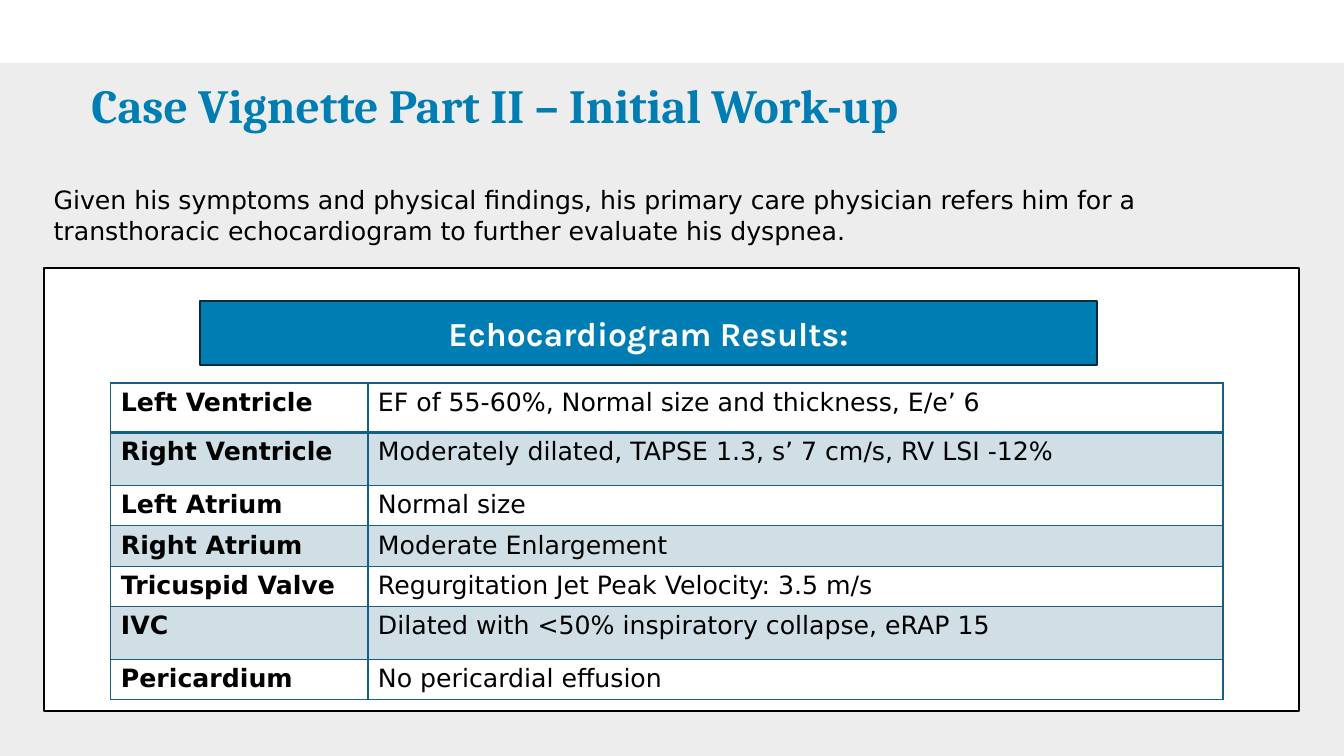
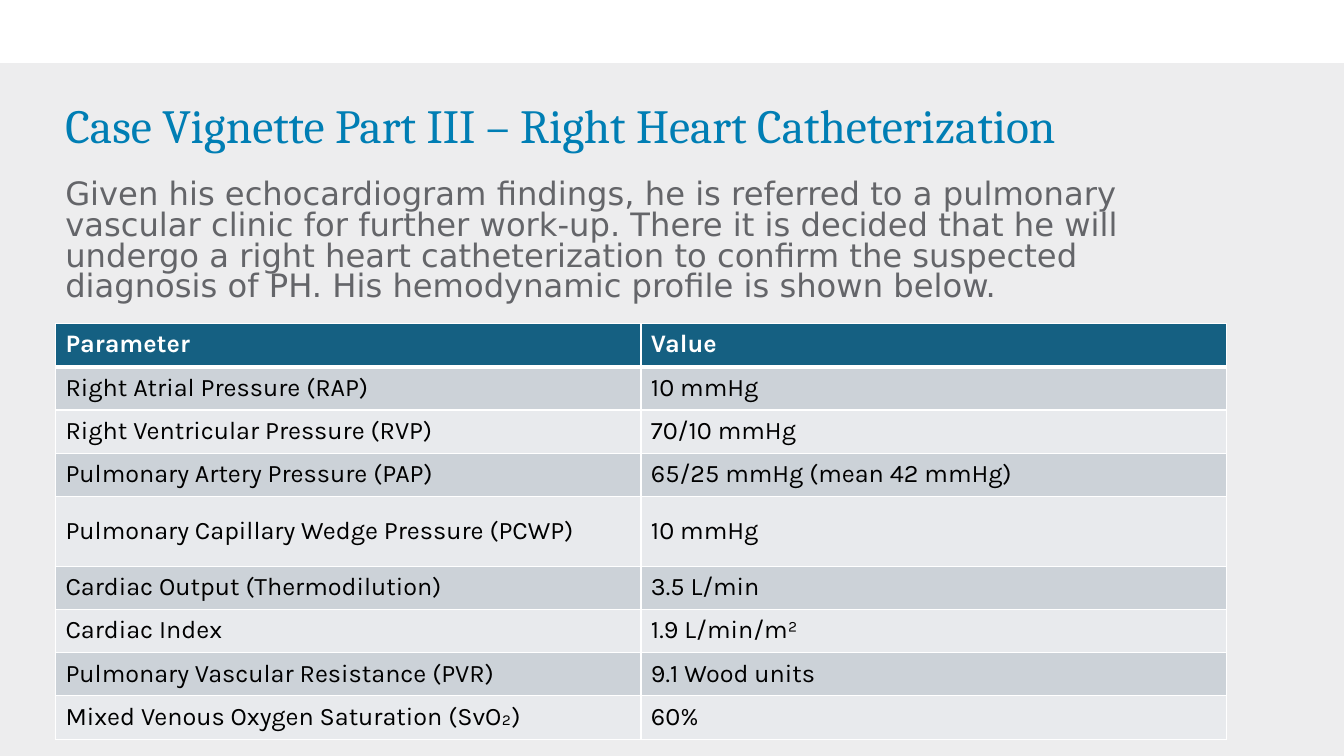
from dataclasses import dataclass

from lxml.etree import SubElement
from pptx import Presentation
from pptx.dml.color import RGBColor as Rgb
from pptx.enum.shapes import MSO_SHAPE as Form
from pptx.enum.text import MSO_ANCHOR as Anchor, PP_ALIGN as Align
from pptx.oxml.ns import qn
from pptx.util import Pt

UNIT = Pt(6)
COLS, ROWS = 160, 90


@dataclass(frozen=True)
class Theme:
    """Colours, fonts and type sizes of the deck."""
    page: str = "EDEDEE"
    white: str = "FFFFFF"
    black: str = "000000"
    blue: str = "007EB4"
    navy: str = "092A39"
    teal: str = "156082"
    pale: str = "D0DFE6"
    dark: str = "CCD2D8"
    light: str = "E8EAED"
    grey: str = "646569"
    serif: str = "Cambria"
    sans: str = "DejaVu Sans"
    karla: str = "Karla"
    head: int = 34
    label: int = 24
    lead: int = 23
    body: int = 18


T = Theme()


@dataclass(frozen=True)
class Box:
    """An area of the slide in grid columns and rows."""
    x: float
    y: float
    w: float
    h: float

    def inner(self, x, y, w, h):
        """Return a box placed relative to this one."""
        return Box(self.x + x, self.y + y, w, h)

    def emu(self):
        """Return left, top, width and height in slide units."""
        return [span(v) for v in (self.x, self.y, self.w, self.h)]


PAGE = Box(0, 0, COLS, ROWS)

ECHO = [
    ("Left Ventricle", "EF of 55-60%, Normal size and thickness, E/e’ 6"),
    ("Right Ventricle", "Moderately dilated, TAPSE 1.3, s’ 7 cm/s, RV LSI -12%"),
    ("Left Atrium", "Normal size"),
    ("Right Atrium", "Moderate Enlargement"),
    ("Tricuspid Valve", "Regurgitation Jet Peak Velocity: 3.5 m/s"),
    ("IVC", "Dilated with <50% inspiratory collapse, eRAP 15"),
    ("Pericardium", "No pericardial effusion"),
]

HEART = [
    ("Parameter", "Value"),
    ("Right Atrial Pressure (RAP)", "10 mmHg"),
    ("Right Ventricular Pressure (RVP)", "70/10 mmHg"),
    ("Pulmonary Artery Pressure (PAP)", "65/25 mmHg (mean 42 mmHg)"),
    ("Pulmonary Capillary Wedge Pressure (PCWP)", "10 mmHg"),
    ("Cardiac Output (Thermodilution)", "3.5 L/min"),
    ("Cardiac Index", "1.9 L/min/m²"),
    ("Pulmonary Vascular Resistance (PVR)", "9.1 Wood units"),
    ("Mixed Venous Oxygen Saturation (SvO₂)", "60%"),
]


def span(count):
    """Turn a count of grid steps into a length."""
    return round(count * UNIT)


def write(frame, words, size=T.body, face=T.sans, color=T.black, bold=False,
          align=Align.LEFT, space=None, after=0):
    """Write one formatted paragraph into a text frame."""
    frame.word_wrap = True
    para = frame.paragraphs[0]
    para.alignment = align
    para.space_before, para.space_after = Pt(0), Pt(after)
    if space:
        para.line_spacing = space
    run = para.add_run()
    run.text = words
    font = run.font
    font.size, font.name, font.bold = Pt(size), face, bold
    font.color.rgb = Rgb.from_string(color)


def note(slide, box, words, **form):
    """Add a text box."""
    write(slide.shapes.add_textbox(*box.emu()).text_frame, words, **form)


def panel(slide, box, fill, line=None):
    """Add a plain rectangle and return it."""
    shape = slide.shapes.add_shape(Form.RECTANGLE, *box.emu())
    shape.shadow.inherit = False
    shape.fill.solid()
    shape.fill.fore_color.rgb = Rgb.from_string(fill)
    if line:
        shape.line.color.rgb = Rgb.from_string(line)
        shape.line.width = Pt(1.5)
    else:
        shape.line.fill.background()
    return shape


def edge(cell, color, top, base):
    """Draw the four borders of a cell."""
    props = cell._tc.get_or_add_tcPr()
    for side, width in zip("LRTB", (1, 1, top, base)):
        line = SubElement(props, qn(f"a:ln{side}"), w=str(Pt(width)))
        fill = SubElement(line, qn("a:solidFill"))
        SubElement(fill, qn("a:srgbClr"), val=color)


def grid(slide, box, data, cols, rows, look, line, rule, anchor):
    """Add a table; look gives each cell its fill and text format."""
    table = slide.shapes.add_table(len(rows), len(cols), *box.emu()).table
    table.first_row = table.horz_banding = False
    for col, width in zip(table.columns, cols):
        col.width = span(width)
    for r, (row, height) in enumerate(zip(table.rows, rows)):
        row.height = span(height)
        for c, cell in enumerate(row.cells):
            fill, form = look(r, c)
            edge(cell, line, rule if r == 1 else 1, rule if r == 0 else 1)
            if fill:
                cell.fill.solid()
                cell.fill.fore_color.rgb = Rgb.from_string(fill)
            else:
                cell.fill.background()
            cell.vertical_anchor = anchor
            write(cell.text_frame, data[r][c], **form)


def start(deck, title, x, y, bold):
    """Add a slide with the shared page colour, top band and title."""
    slide = deck.slides.add_slide(deck.slide_layouts[6])
    slide.background.fill.solid()
    slide.background.fill.fore_color.rgb = Rgb.from_string(T.page)
    panel(slide, PAGE.inner(0, 0, COLS, 7.5), T.white)
    note(slide, PAGE.inner(x, y, 139.4, 13.6), title, size=T.head,
         face=T.serif, color=T.blue, bold=bold, space=0.9)
    return slide


def results(slide, box):
    """Add the framed echocardiogram banner and table."""
    def look(r, c):
        """Shade every other row and embolden the first column."""
        return T.pale if r % 2 else None, {"bold": c == 0}

    panel(slide, box, T.white, T.black)
    bar = panel(slide, box.inner(18.6, 3.9, 106.8, 7.7), T.blue, T.navy)
    bar.text_frame.vertical_anchor = Anchor.MIDDLE
    write(bar.text_frame, "Echocardiogram Results:", size=T.label,
          face=T.karla, color=T.white, bold=True, align=Align.CENTER)
    rows = [5.9, 6.3, 4.7, 4.7, 4.7, 6.3, 4.7]
    grid(slide, box.inner(8, 13.7, 132.4, sum(rows)), ECHO, [30.6, 101.8],
         rows, look, T.teal, 2, Anchor.TOP)


def profile(slide, box):
    """Add the hemodynamic table with its header row."""
    def look(r, c):
        """Mark the header and alternate the other rows."""
        form = {"face": T.karla, "space": Pt(20.2), "bold": r == 0,
                "color": T.black if r else T.white}
        return (T.dark if r % 2 else T.light) if r else T.teal, form

    rows = [8.3 if r == 4 else 5.15 for r in range(len(HEART))]
    grid(slide, box, HEART, [box.w / 2] * 2, rows, look, T.white, 3,
         Anchor.MIDDLE)


def echo(deck):
    """Build the initial work-up slide."""
    slide = start(deck, "Case Vignette Part II – Initial Work-up",
                  9.7, 9.2, True)
    note(slide, PAGE.inner(5.2, 21.4, 147.7, 8.5),
         "Given his symptoms and physical findings, his primary care "
         "physician refers him for a transthoracic echocardiogram to "
         "further evaluate his dyspnea.", after=6)
    results(slide, PAGE.inner(5.2, 31.9, 149.5, 52.8))


def heart(deck):
    """Build the catheterization slide."""
    slide = start(deck, "Case Vignette Part III – Right Heart Catheterization",
                  6.6, 11.6, False)
    profile(slide, PAGE.inner(6.6, 38.5, 139.4, 49.5))
    note(slide, PAGE.inner(6.6, 20.9, 139.4, 17.6),
         "Given his echocardiogram findings, he is referred to a pulmonary "
         "vascular clinic for further work-up. There it is decided that he "
         "will undergo a right heart catheterization to confirm the "
         "suspected diagnosis of PH. His hemodynamic profile is shown below.",
         size=T.lead, color=T.grey, space=0.8)


def main():
    """Build and save the deck."""
    deck = Presentation()
    deck.slide_width, deck.slide_height = span(COLS), span(ROWS)
    echo(deck)
    heart(deck)
    deck.save("out.pptx")


if __name__ == "__main__":
    main()
